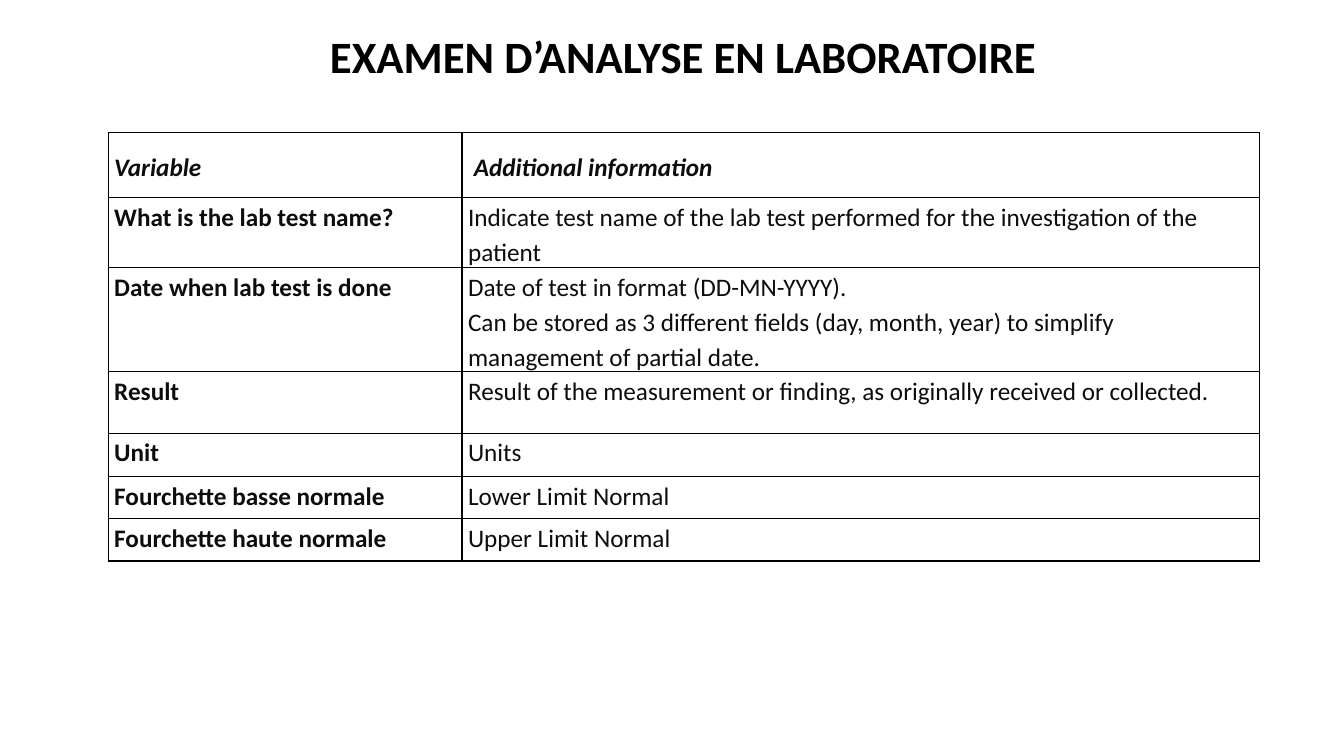
from lxml import etree
from pptx import Presentation
from pptx import util as u
from pptx.dml.color import RGBColor
from pptx.enum import text
from pptx.oxml import ns

BLACK = RGBColor(0x00, 0x00, 0x00)
INK = RGBColor(0x0D, 0x0D, 0x0D)

# Lab test variables; a line break starts a new paragraph
HEADER = ("Variable", " Additional information")
VARIABLES = [
    ("What is the lab test name?",
     "Indicate test name of the lab test performed for the investigation of the patient"),
    ("Date when lab test is done",
     "Date of test in format (DD-MN-YYYY). \n"
     "Can be stored as 3 different fields (day, month, year) "
     "to simplify management of partial date."),
    ("Result",
     "Result of the measurement or finding, as originally received or collected."),
    ("Unit", "Units"),
    ("Fourchette basse normale", "Lower Limit Normal "),
    ("Fourchette haute normale", "Upper Limit Normal"),
]


class SlideBuilder:
    """Holds the style and the current slide; lengths are percent of its size."""
    font = "Calibri"
    title_size = u.Pt(32)
    body_size = u.Pt(18)
    line_spacing = 1.15
    side_margin = u.Inches(0.06)
    border = u.Pt(1)

    def __init__(self, prs):
        self.prs = prs
        self.slide = prs.slides.add_slide(prs.slide_layouts[6])

    def x(self, share):
        return round(self.prs.slide_width * share / 100)

    def y(self, share):
        return round(self.prs.slide_height * share / 100)

    def style(self, p, size, color, bold, italic=False):
        p.font.name, p.font.size = self.font, size
        p.font.bold, p.font.italic = bold, italic
        p.font.color.rgb = color

    def title(self, words, left, top, width, height):
        sp = self.slide.shapes.add_textbox(
            self.x(left), self.y(top), self.x(width), self.y(height))
        tf = sp.text_frame
        tf.word_wrap = True
        tf.vertical_anchor = text.MSO_ANCHOR.MIDDLE
        p = tf.paragraphs[0]
        p.text = words
        p.alignment = text.PP_ALIGN.CENTER
        self.style(p, self.title_size, BLACK, bold=True)

    def outline(self, cell):
        tc_pr = cell._tc.get_or_add_tcPr()
        for side in ("lnL", "lnR", "lnT", "lnB"):
            ln = etree.SubElement(tc_pr, ns.qn(f"a:{side}"), w=str(self.border))
            fill = etree.SubElement(ln, ns.qn("a:solidFill"))
            etree.SubElement(fill, ns.qn("a:srgbClr"), val=str(BLACK))

    def cell(self, cell, words, bold, header):
        self.outline(cell)
        cell.fill.background()
        cell.margin_left = cell.margin_right = self.side_margin
        cell.margin_top = cell.margin_bottom = 0
        cell.vertical_anchor = text.MSO_ANCHOR.MIDDLE if header else text.MSO_ANCHOR.TOP
        cell.text = words
        for p in cell.text_frame.paragraphs:
            p.line_spacing = self.line_spacing
            self.style(p, self.body_size, INK, bold, italic=header)

    def table(self, rows, left, top, widths, heights):
        table = self.slide.shapes.add_table(
            len(rows), len(widths), self.x(left), self.y(top),
            self.x(sum(widths)), self.y(sum(heights))).table
        table.first_row = table.horz_banding = False
        for column, width in zip(table.columns, widths):
            column.width = self.x(width)
        for i, (row, height) in enumerate(zip(rows, heights)):
            table.rows[i].height = self.y(height)
            for j, words in enumerate(row):
                self.cell(table.cell(i, j), words, bold=i == 0 or j == 0, header=i == 0)


def main():
    prs = Presentation()
    prs.slide_width, prs.slide_height = u.Inches(13.33), u.Inches(7.5)
    page = SlideBuilder(prs)

    # Heading
    page.title("EXAMEN D’ANALYSE EN LABORATOIRE", 17.1, 2.8, 67.5, 9.2)

    # Table of variables
    page.table([HEADER] + VARIABLES, left=8.05, top=17.5, widths=(26.33, 59.34),
               heights=(8.67, 8.93, 13.47, 8.13, 5.73, 5.6, 5.6))

    prs.save("out.pptx")


if __name__ == "__main__":
    main()
